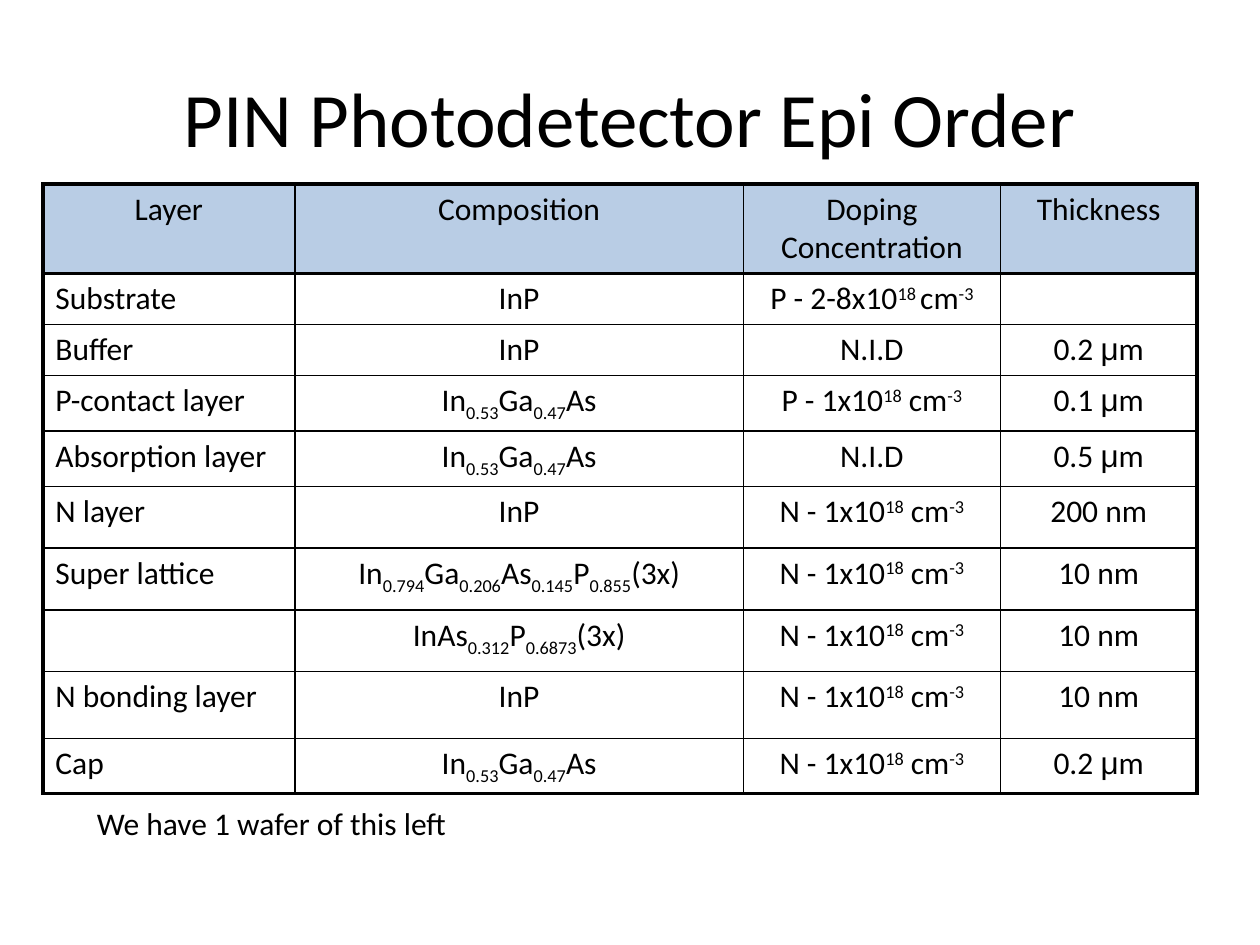
from pptx import Presentation
from pptx import util as u
from pptx.dml.color import RGBColor
from pptx.enum import text
from pptx.oxml import parse_xml
from pptx.oxml.ns import nsdecls

BLACK, HEAD = "000000", "B9CDE5"
THICK, THIN = 2.25, 1


def style(run, size, font="Calibri", color=BLACK):
    run.font.size = u.Pt(size)
    run.font.name = font
    run.font.color.rgb = RGBColor.from_string(color)


def border(cell, side, width):
    cell._tc.get_or_add_tcPr().append(parse_xml(
        f'<a:ln{side} {nsdecls("a")} w="{u.Pt(width)}"><a:solidFill>'
        f'<a:srgbClr val="{BLACK}"/></a:solidFill></a:ln{side}>'))


prs = Presentation()
prs.slide_width, prs.slide_height = u.Inches(10), u.Inches(7.5)
slide = prs.slides.add_slide(prs.slide_layouts[5])

# Title
title = slide.shapes.title
title.left, title.top = u.Inches(0.5), u.Inches(0.3)
title.width, title.height = u.Inches(9), u.Inches(1.25)
title.text_frame.text = "PIN Photodetector Epi Order"
title.text_frame.vertical_anchor = text.MSO_ANCHOR.MIDDLE
par = title.text_frame.paragraphs[0]
par.alignment = text.PP_ALIGN.CENTER
style(par.runs[0], 44)

# Layer data: "|" parts the runs, "^" raises and "_" lowers one
INGAAS = "In|_0.53|Ga|_0.47|As"
NDOPE = "N - 1x10|^18| cm|^-3"
rows = [
    ("Layer", "Composition", "Doping Concentration", "Thickness"),
    ("Substrate", "InP", "P - 2-8x10|^18 |cm|^-3", ""),
    ("Buffer", "InP", "N.I.D", "0.2 |μ|m"),
    ("P-contact layer", INGAAS, "P - 1x10|^18| cm|^-3", "0.1 |μ|m"),
    ("Absorption layer", INGAAS, "N.I.D", "0.5 |μ|m"),
    ("N layer", "InP", NDOPE, "200 nm"),
    ("Super lattice", "In|_0.794|Ga|_0.206|As|_0.145|P|_0.855|(3x)", NDOPE, "10 nm"),
    ("", "InAs|_0.312|P|_0.6873|(3x)", NDOPE, "10 nm"),
    ("N bonding layer", "InP", NDOPE, "10 nm"),
    ("Cap", INGAAS, NDOPE, "0.2 |μ|m"),
]
widths = [2, 3.56, 2.04, 1.56]
heights = [0.53] + [0.38] * 4 + [0.49] * 3 + [0.53, 0.38]
shift = {"^": "30000", "_": "-25000"}

# Table
table = slide.shapes.add_table(
    len(rows), len(widths), u.Inches(0.34), u.Inches(1.46),
    u.Inches(sum(widths)), u.Inches(sum(heights))).table
table.first_row = table.horz_banding = False
for col, width in zip(table.columns, widths):
    col.width = u.Inches(width)
for row, height in zip(table.rows, heights):
    row.height = u.Inches(height)

last_r, last_c = len(rows) - 1, len(widths) - 1
for r, row in enumerate(rows):
    for c, value in enumerate(row):
        cell = table.cell(r, c)
        par = cell.text_frame.paragraphs[0]
        if r == 0 or c > 0:
            par.alignment = text.PP_ALIGN.CENTER
        for part in value.split("|") if value else []:
            run = par.add_run()
            run.text = part.lstrip("^_")
            style(run, 18, "Arial" if part == "μ" else "Calibri")
            if part[0] in shift:
                run.font._element.set("baseline", shift[part[0]])

        # Thick lines run round the table and below the header
        edges = {"L": c == 0, "R": c == last_c, "T": r < 2, "B": r in (0, last_r)}
        for side, outer in edges.items():
            border(cell, side, THICK if outer else THIN)
        if r == 0:
            cell.fill.solid()
            cell.fill.fore_color.rgb = RGBColor.from_string(HEAD)
        else:
            cell.fill.background()

# Note
note = slide.shapes.add_textbox(
    u.Inches(0.67), u.Inches(6.33), u.Inches(7.83), u.Inches(0.4))
note.text_frame.word_wrap = True
note.text_frame.auto_size = text.MSO_AUTO_SIZE.SHAPE_TO_FIT_TEXT
note.text_frame.text = "We have 1 wafer of this left"
style(note.text_frame.paragraphs[0].runs[0], 18)

prs.save("out.pptx")
